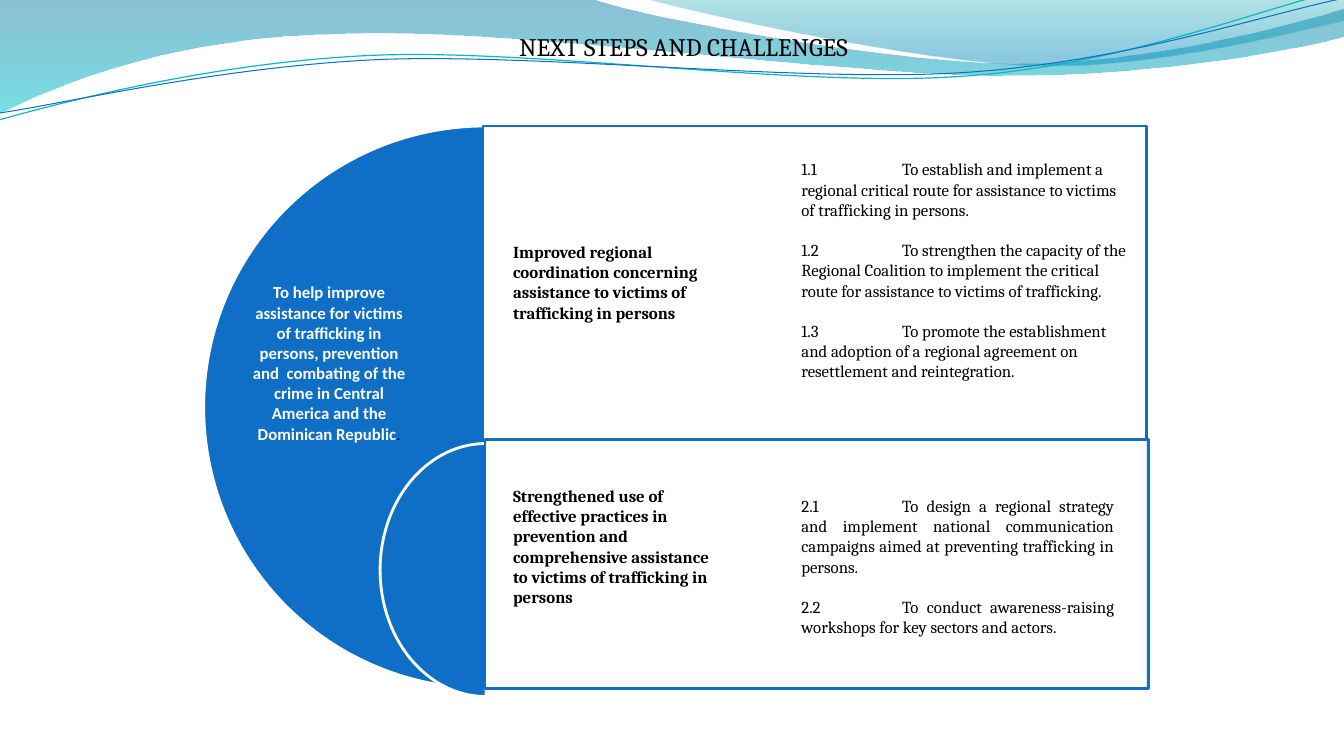
"""Build the slide on next steps and challenges in assisting trafficking victims."""
from math import cos, radians, sin

from lxml import etree
from pptx import Presentation
from pptx.dml.color import RGBColor
from pptx.enum.shapes import MSO_SHAPE
from pptx.enum.text import MSO_AUTO_SIZE, PP_ALIGN
from pptx.oxml.ns import qn
from pptx.util import Inches, Pt

BLUE = RGBColor(0x0F, 0x6F, 0xC6)
TEAL = RGBColor(0x0A, 0xB8, 0xBF)
WHITE = RGBColor(0xFF, 0xFF, 0xFF)
BLACK = RGBColor(0, 0, 0)
DEEP_BLUE = RGBColor(0x00, 0x74, 0xA1)
CYAN = RGBColor(0x00, 0xC6, 0xCF)
SEA_GREEN = RGBColor(0x00, 0xA1, 0xA9)
SKY_BLUE = RGBColor(0x00, 0x8B, 0xBF)

TITLE = "NEXT STEPS AND CHALLENGES"
GOAL = ("To help improve assistance for victims of trafficking in persons, prevention "
        "and  combating of the crime in Central America and the Dominican Republic")
OUTCOMES = [
    {"aim": "Improved regional coordination concerning assistance to victims of "
            "trafficking in persons",
     "steps": ["1.1\tTo establish and implement a regional critical route for assistance "
               "to victims of trafficking in persons.",
               "1.2\tTo strengthen the capacity of the Regional Coalition to implement "
               "the critical route for assistance to victims of trafficking.",
               "1.3\tTo promote the establishment and adoption of a regional agreement "
               "on resettlement and reintegration."],
     "align": PP_ALIGN.LEFT, "pie": (2.02, 1.25, 5.58, 5.58),
     "panel": (4.79, 1.25, 6.58, 5.58),
     "aim_box": (4.99, 2.35, 2.15, 1.11), "steps_box": (7.85, 1.53, 3.42, 3.13)},
    {"aim": "Strengthened use of effective practices in prevention and comprehensive "
            "assistance to victims of trafficking in persons",
     "steps": ["2.1\tTo design a regional strategy and implement national communication "
               "campaigns aimed at preventing trafficking in persons.",
               "2.2\tTo conduct awareness-raising workshops for key sectors and actors."],
     "align": PP_ALIGN.JUSTIFY, "pie": (3.77, 4.4, 2.1, 2.51),
     "panel": (4.81, 4.36, 6.58, 2.47),
     "aim_box": (4.99, 4.77, 2.15, 1.31), "steps_box": (7.85, 4.87, 3.3, 1.51)},
]
WAVES = [
    {"route": [(0, 0), (5.87, -0.01), (6.34, 0.17, 8.85, 0.63, 10.11, 0.63),
               (11.38, 0.63, 12.78, 0.26, 13.33, 0.09), (13.35, 0.36),
               (13.11, 0.44, 11.6, 0.76, 9.94, 0.75),
               (8.29, 0.75, 5.09, 0.28, 3.43, 0.34),
               (1.72, 0.36, 0.61, 0.83, -0.01, 1.13), (0, 0)],
     "stops": [(0, DEEP_BLUE, 45), (1, CYAN, 55)]},
    {"route": [(6.39, -0.01), (6.79, 0.11, 9.09, 0.62, 10.25, 0.65),
               (11.41, 0.69, 12.82, 0.32, 13.33, 0.21), (13.33, 0), (6.39, -0.01)],
     "stops": [(0, SEA_GREEN, 30), (0.8, SKY_BLUE, 45)]},
    {"route": [(-0.01, 1.19), (0.64, 1.01, 2.11, 0.62, 3.69, 0.55),
               (5.27, 0.48, 7.9, 0.87, 9.5, 0.76), (11.1, 0.66, 12.52, 0.08, 13.31, -0.1)],
     "line": (TEAL, 0.85), "tilt": -2.7},
    {"route": [(0, 1.12), (0.63, 1.03, 2.18, 0.66, 3.78, 0.59),
               (5.37, 0.53, 7.96, 0.82, 9.55, 0.72), (11.15, 0.62, 12.55, 0.14, 13.34, -0.02)],
     "line": (BLUE, 0.75), "tilt": -2.7},
]
PIVOT = (6.66, 0.58)
BODY = {"name": "Cambria", "size": Pt(12), "bold": False}
STRONG = {**BODY, "bold": True}
HEADING = {**BODY, "size": Pt(18)}
GOAL_FONT = {**STRONG, "name": "Calibri"}


def level(point, tilt):
    """Turn a point back by the tilt about the pivot, in EMU."""
    x, y = point[0] - PIVOT[0], point[1] - PIVOT[1]
    angle = radians(-tilt)
    return (Inches(PIVOT[0] + x * cos(angle) - y * sin(angle)),
            Inches(PIVOT[1] + x * sin(angle) + y * cos(angle)))


def bend(shape, route):
    """Join each three points of a curved leg into one cubic curve."""
    outline = next(shape._element.iter(qn("a:path")))
    legs = iter(outline.findall(qn("a:lnTo")))
    for leg in route[1:]:
        first = next(legs)
        if len(leg) == 6:
            first.tag = qn("a:cubicBezTo")
            for _ in range(2):
                spare = next(legs)
                first.append(spare[0])
                outline.remove(spare)


def set_opacity(shape, percents):
    """Give each colour of the shape's fill its opacity."""
    properties = shape._element.spPr
    fill = properties.find(qn("a:gradFill"))
    if fill is None:
        fill = properties.find(qn("a:solidFill"))
    for colour, percent in zip(fill.iter(qn("a:srgbClr")), percents):
        etree.SubElement(colour, qn("a:alpha")).set("val", str(percent * 1000))


def add_wave(slide, wave):
    """Draw a filled band or a thin line along its route."""
    route, tilt = wave["route"], wave.get("tilt", 0)
    start, *rest = [level(leg[i:i + 2], tilt) for leg in route for i in range(0, len(leg), 2)]
    builder = slide.shapes.build_freeform(*start, scale=1.0)
    builder.add_line_segments(rest, close="stops" in wave)
    shape = builder.convert_to_shape()
    bend(shape, route)
    shape.rotation = tilt
    shape.shadow.inherit = False
    if "line" in wave:
        shape.fill.background()
        shape.line.color.rgb, width = wave["line"]
        shape.line.width = Pt(width)
        return
    shape.line.fill.background()
    shape.fill.gradient()
    shape.fill.gradient_angle = 270
    for stop, (position, colour, _) in zip(shape.fill.gradient_stops, wave["stops"]):
        stop.position = position
        stop.color.rgb = colour
    set_opacity(shape, [opacity for _, _, opacity in wave["stops"]])


def add_block(slide, preset, box, fill, line):
    """Draw a filled preset shape with an outline."""
    shape = slide.shapes.add_shape(preset, *map(Inches, box))
    shape.shadow.inherit = False
    shape.fill.solid()
    shape.fill.fore_color.rgb = fill
    shape.line.color.rgb = line
    shape.line.width = Pt(2)
    return shape


def add_run(paragraph, text, font, colour):
    """Add a run with the given font values."""
    run = paragraph.add_run()
    run.text = text
    for attribute, value in font.items():
        setattr(run.font, attribute, value)
    run.font.color.rgb = colour


def add_text(slide, box, lines, font, colour=BLACK, align=PP_ALIGN.LEFT, wrap=True,
             fit=MSO_AUTO_SIZE.SHAPE_TO_FIT_TEXT):
    """Write one paragraph per line and return the last one."""
    frame = slide.shapes.add_textbox(*map(Inches, box)).text_frame
    frame.word_wrap = wrap
    frame.auto_size = fit
    for index, line in enumerate(lines):
        paragraph = frame.add_paragraph() if index else frame.paragraphs[0]
        paragraph.alignment = align
        paragraph.space_before = Pt(14.5 if index else 0)
        if "\t" in line:
            tabs = etree.SubElement(paragraph._p.get_or_add_pPr(), qn("a:tabLst"))
            etree.SubElement(tabs, qn("a:tab"), pos=str(Inches(1)), algn="l")
        add_run(paragraph, line, font, colour)
    return paragraph


def main():
    """Assemble and save the slide."""
    deck = Presentation()
    deck.slide_width, deck.slide_height = Inches(13.33), Inches(7.5)
    slide = deck.slides.add_slide(deck.slide_layouts[6])
    for wave in WAVES:
        add_wave(slide, wave)
    for outcome in OUTCOMES:
        half_disc = add_block(slide, MSO_SHAPE.PIE, outcome["pie"], BLUE, WHITE)
        half_disc.adjustments[0], half_disc.adjustments[1] = 54, 162
        panel = add_block(slide, MSO_SHAPE.RECTANGLE, outcome["panel"], WHITE, BLUE)
        set_opacity(panel, [90])
    for outcome in OUTCOMES:
        add_text(slide, outcome["aim_box"], [outcome["aim"]], STRONG)
        add_text(slide, outcome["steps_box"], outcome["steps"], BODY, align=outcome["align"])
    goal = add_text(slide, (2.38, 2.75, 1.77, 1.88), [GOAL], GOAL_FONT, WHITE,
                    PP_ALIGN.CENTER, fit=MSO_AUTO_SIZE.NONE)
    add_run(goal, ".", {**GOAL_FONT, "bold": False}, BLACK)
    add_text(slide, (5.05, 0.26, 3.91, 0.4), [TITLE], HEADING, wrap=False)
    deck.save("out.pptx")


if __name__ == "__main__":
    main()
